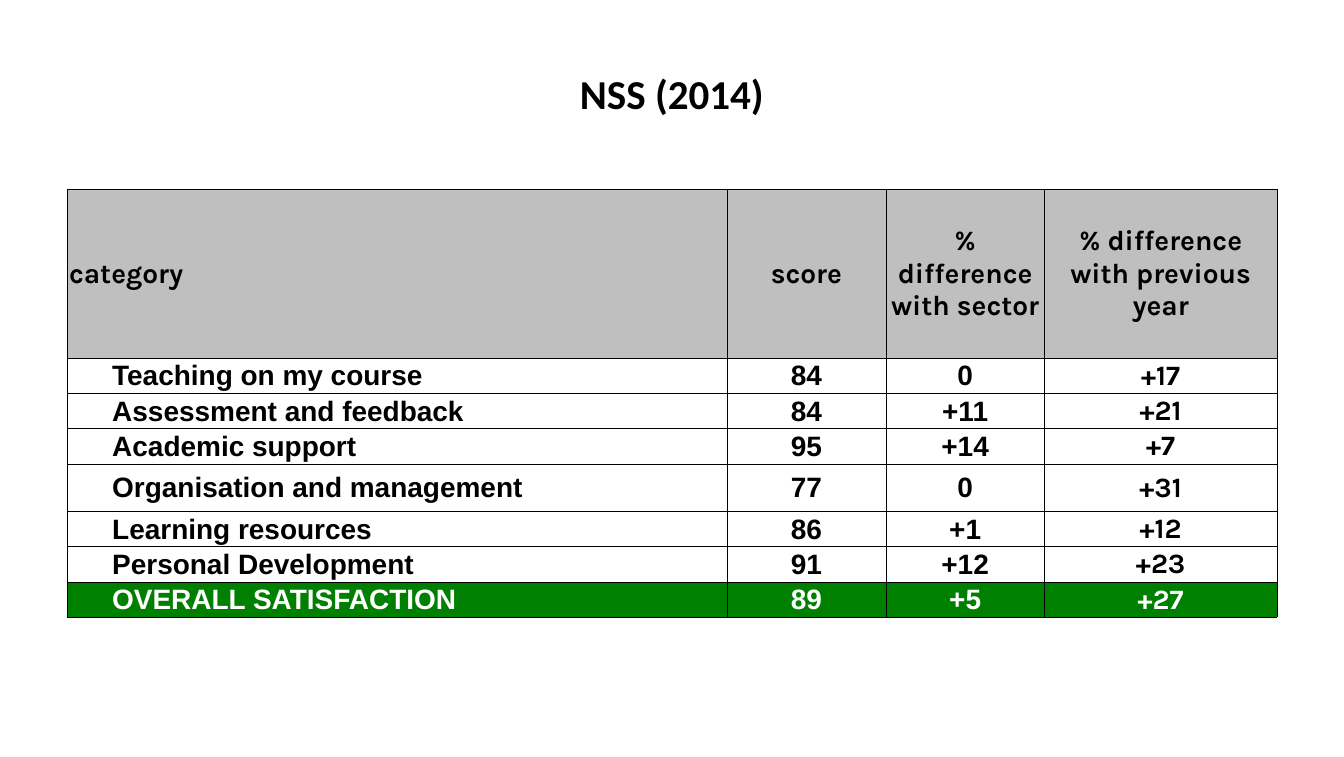
from lxml.etree import SubElement
from pptx import Presentation
from pptx.dml.color import RGBColor
from pptx.enum.text import MSO_ANCHOR as Anchor, PP_ALIGN as Align
from pptx.oxml.ns import qn
from pptx.util import Cm, Pt

TITLE = "NSS (2014)"
HEADER = ("category", "score", "% difference with sector", "% difference with previous year")
RESULTS = [
    ("Teaching on my course", "84", "0", "+17"),
    ("Assessment and feedback", "84", "+11", "+21"),
    ("Academic support", "95", "+14", "+7"),
    ("Organisation and management", "77", "0", "+31"),
    ("Learning resources", "86", "+1", "+12"),
    ("Personal Development", "91", "+12", "+23"),
    ("OVERALL SATISFACTION", "89", "+5", "+27"),
]
COLUMN_WIDTHS = (24.94, 6, 6, 8.78)
HEADER_HEIGHT, ROW_HEIGHT, TALL_HEIGHT = 6.4, 1.33, 1.8
TALL_CATEGORY = "Organisation and management"
BLACK, WHITE, GREY, GREEN = "000000", "FFFFFF", "BFBFBF", "008000"


def color(value):
    return RGBColor.from_string(value)


def write(frame, text, font, size, ink, align):
    para = frame.paragraphs[0]
    para.alignment = align
    span = para.add_run()
    span.text = text
    span.font.name = font
    span.font.size = Pt(size)
    span.font.bold = True
    span.font.color.rgb = color(ink)


def add_borders(cell):
    properties = cell._tc.get_or_add_tcPr()
    for side in ("lnL", "lnR", "lnT", "lnB"):
        line = SubElement(properties, qn(f"a:{side}"), w=str(Pt(0.5)))
        fill = SubElement(line, qn("a:solidFill"))
        SubElement(fill, qn("a:srgbClr"), val=BLACK)


def style_cell(cell, text, font, ink, fill, align, indent):
    cell.margin_left, cell.margin_right = Cm(indent), Cm(0.07)
    cell.margin_top, cell.margin_bottom = Cm(0.04), Cm(0)
    cell.vertical_anchor = Anchor.MIDDLE
    add_borders(cell)
    if fill:
        cell.fill.solid()
        cell.fill.fore_color.rgb = color(fill)
    else:
        cell.fill.background()
    write(cell.text_frame, text, font, 30, ink, align)


def add_title(page):
    title = page.shapes.title
    title.left, title.top, title.width, title.height = Cm(2.54), Cm(1.14), Cm(45.72), Cm(4.78)
    title.text_frame.vertical_anchor = Anchor.MIDDLE
    write(title.text_frame, TITLE, "Calibri", 44, BLACK, Align.CENTER)


def add_results(page):
    rows = [HEADER, *RESULTS]
    heights = [HEADER_HEIGHT] + [
        TALL_HEIGHT if row[0] == TALL_CATEGORY else ROW_HEIGHT for row in RESULTS
    ]
    table = page.shapes.add_table(
        len(rows), len(HEADER), Cm(2.54), Cm(7.13), Cm(sum(COLUMN_WIDTHS)), Cm(sum(heights))
    ).table
    table.horz_banding = False
    for column, width in zip(table.columns, COLUMN_WIDTHS):
        column.width = Cm(width)
    for r, (row, height) in enumerate(zip(rows, heights)):
        table.rows[r].height = Cm(height)
        is_header, is_total = r == 0, r == len(rows) - 1
        fill = GREY if is_header else GREEN if is_total else None
        ink = WHITE if is_total else BLACK
        for c, text in enumerate(row):
            font = "Karla" if is_header or c == len(row) - 1 else "Arial"
            align = Align.CENTER if c else Align.LEFT
            indent = 0.07 if is_header or c else 1.7
            style_cell(table.cell(r, c), text, font, ink, fill, align, indent)


def main():
    deck = Presentation()
    deck.slide_width, deck.slide_height = Cm(50.8), Cm(28.6)
    page = deck.slides.add_slide(deck.slide_layouts.get_by_name("Title Only"))
    add_title(page)
    add_results(page)
    deck.save("out.pptx")


if __name__ == "__main__":
    main()
